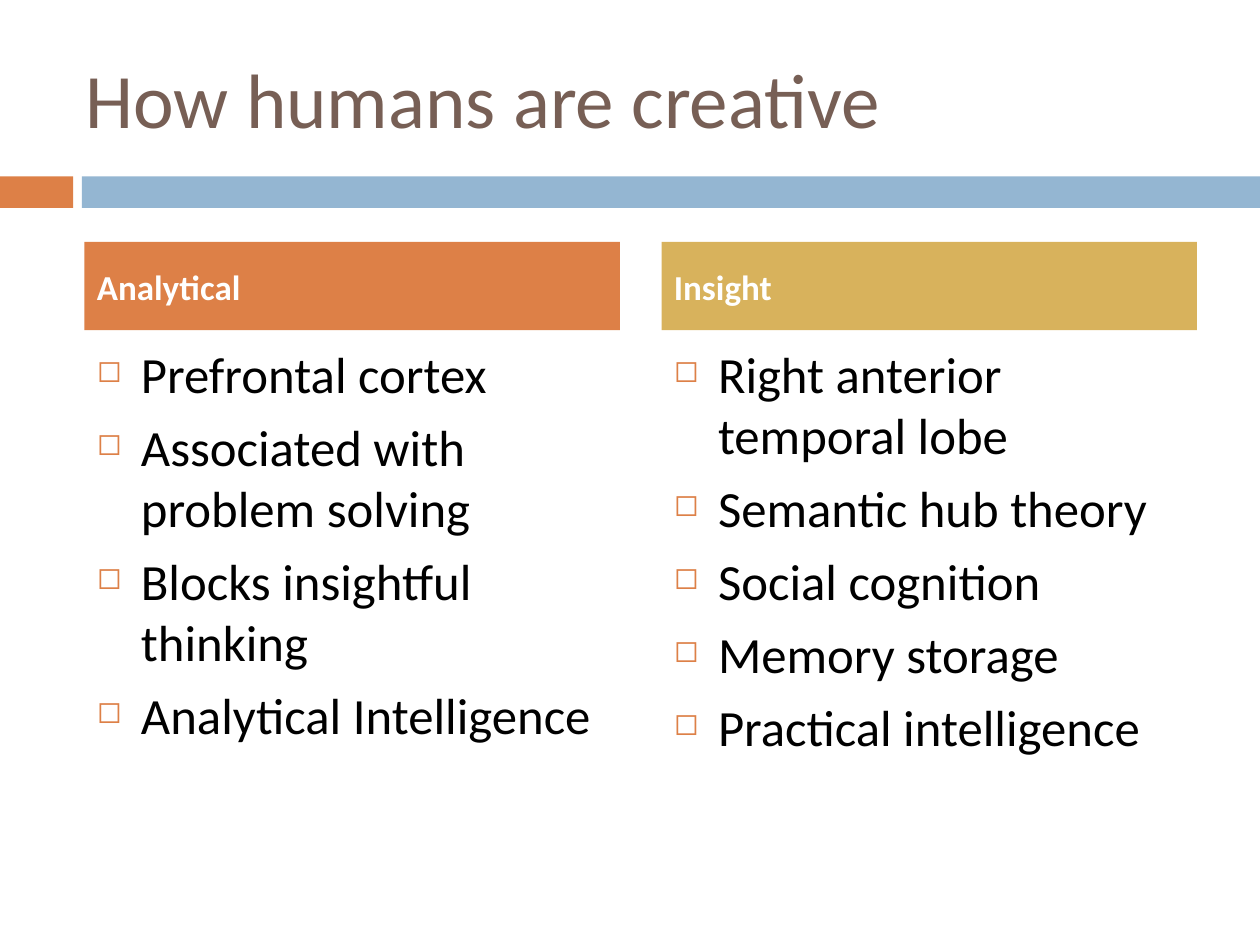
import pptx
import pptx.dml.color
import pptx.enum.shapes
import pptx.enum.text
import pptx.oxml.ns
import pptx.util
from lxml import etree

Inches = pptx.util.Inches
Pt = pptx.util.Pt

COLORS = {
    "title": "775F55",
    "orange": "DD8047",
    "blue": "94B6D2",
    "gold": "D8B25C",
    "body": "000000",
    "white": "FFFFFF",
}
COLUMNS = [
    ("Analytical", "orange", [
        "Prefrontal cortex",
        "Associated with problem solving",
        "Blocks insightful thinking",
        "Analytical Intelligence",
    ]),
    ("Insight", "gold", [
        "Right anterior temporal lobe",
        "Semantic hub theory",
        "Social cognition",
        "Memory storage",
        "Practical intelligence",
    ]),
]
COLUMN_LEFT, COLUMN_WIDTH, COLUMN_STEP = 0.67, 4.25, 4.58


class SlideBuilder:
    """Holds the text style and the slide being built."""

    font = "Calibri"

    def __init__(self, slide):
        self.slide = slide

    def rgb(self, color):
        return pptx.dml.color.RGBColor.from_string(COLORS[color])

    def set_text(self, shape, lines, size, color, bold=False, middle=True):
        tf = shape.text_frame
        tf.word_wrap = True
        anchor = pptx.enum.text.MSO_ANCHOR
        tf.vertical_anchor = anchor.MIDDLE if middle else anchor.TOP
        tf.text = "\n".join(lines)
        for p in tf.paragraphs:
            p.alignment = pptx.enum.text.PP_ALIGN.LEFT
            for r in p.runs:
                r.font.name = self.font
                r.font.size = Pt(size)
                r.font.bold = bold
                r.font.color.rgb = self.rgb(color)
        return tf

    def bar(self, left, top, width, height, color):
        sp = self.slide.shapes.add_shape(
            pptx.enum.shapes.MSO_SHAPE.RECTANGLE,
            Inches(left), Inches(top), Inches(width), Inches(height))
        sp.shadow.inherit = False
        sp.fill.solid()
        sp.fill.fore_color.rgb = self.rgb(color)
        sp.line.fill.background()
        return sp

    def box(self, left, top, width, height):
        return self.slide.shapes.add_textbox(
            Inches(left), Inches(top), Inches(width), Inches(height))

    def title(self, text):
        self.set_text(self.box(0.58, 0.3, 8.92, 0.95), [text], 44, "title")

    def heading(self, left, text, color):
        sp = self.bar(left, 1.92, COLUMN_WIDTH, 0.7, color)
        self.set_text(sp, [text], 20, "white", bold=True)

    def bullets(self, left, lines):
        sp = self.box(left, 2.67, COLUMN_WIDTH, 3.92)
        tf = self.set_text(sp, lines, 29, "body", middle=False)
        qn = pptx.oxml.ns.qn
        for i, p in enumerate(tf.paragraphs):
            pPr = p._p.get_or_add_pPr()
            pPr.set("marL", str(Inches(0.35)))
            pPr.set("indent", str(Inches(-0.35)))
            buClr = etree.SubElement(pPr, qn("a:buClr"))
            etree.SubElement(buClr, qn("a:srgbClr"), val=COLORS["orange"])
            etree.SubElement(pPr, qn("a:buSzPct"), val="60000")
            etree.SubElement(pPr, qn("a:buChar"), char="◻")
            if i:
                p.space_before = Pt(7)


def main():
    prs = pptx.Presentation()
    prs.slide_width, prs.slide_height = Inches(10), Inches(7.5)
    s = SlideBuilder(prs.slides.add_slide(prs.slide_layouts[6]))
    s.bar(0, 1.4, 0.58, 0.25, "orange")
    s.bar(0.65, 1.4, 9.35, 0.25, "blue")
    s.title("How humans are creative")
    for i, (heading, color, lines) in enumerate(COLUMNS):
        left = COLUMN_LEFT + i * COLUMN_STEP
        s.heading(left, heading, color)
        s.bullets(left, lines)
    prs.save("out.pptx")


if __name__ == "__main__":
    main()
